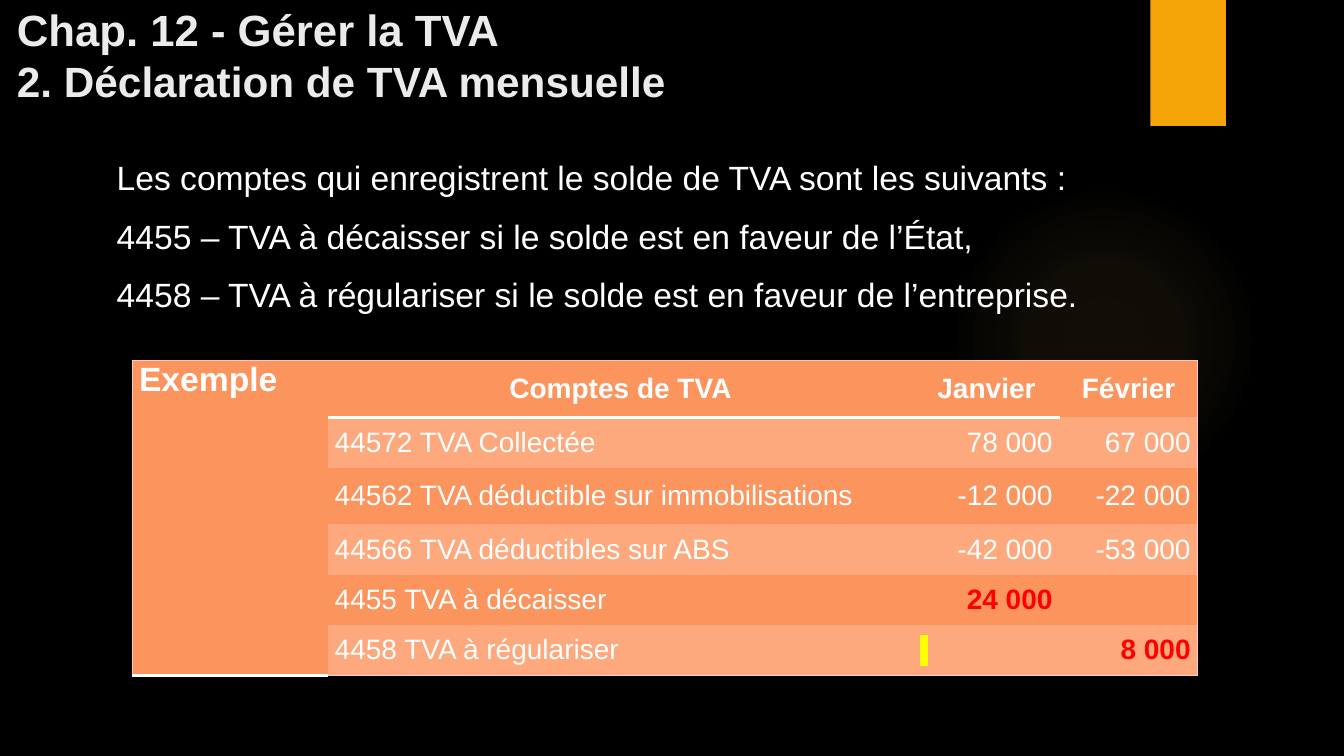
from dataclasses import dataclass

from lxml import etree
from pptx import Presentation
from pptx.dml.color import RGBColor
from pptx.enum.shapes import MSO_SHAPE
from pptx.enum.text import MSO_ANCHOR, PP_ALIGN
from pptx.oxml.ns import qn
from pptx.util import Inches, Pt

LEFT, CENTER, RIGHT = PP_ALIGN.LEFT, PP_ALIGN.CENTER, PP_ALIGN.RIGHT
TOP, MIDDLE, BOTTOM = MSO_ANCHOR.TOP, MSO_ANCHOR.MIDDLE, MSO_ANCHOR.BOTTOM
RECT, OVAL = MSO_SHAPE.RECTANGLE, MSO_SHAPE.OVAL

FONT = "Arial"
PLAIN_STYLE = "{2D5ABB26-0587-4C30-8999-92F81FD0307C}"
COLORS = {
    "back": "000000", "white": "FFFFFF", "title": "EBEBEB", "gold": "F5A408",
    "glow": "FAC96A", "base": "FC945D", "band": "FDA97D", "edge": "FDC9BD",
    "red": "FF0000", "mark": "FFFF00",
}


@dataclass
class Style:
    size: float
    color: str = "white"
    bold: bool = False
    align: PP_ALIGN = LEFT


@dataclass
class Account:
    name: str
    january: str
    february: str
    result: bool = False


TITLE = [("Chap. 12 - Gérer la TVA", 31.2), ("2. Déclaration de TVA mensuelle", 30.2)]
BODY = [
    "Les comptes qui enregistrent le solde de TVA sont les suivants :",
    "4455 – TVA à décaisser si le solde est en faveur de l’État,",
    "4458 – TVA à régulariser si le solde est en faveur de l’entreprise.",
]
HEADS = ["Comptes de TVA", "Janvier", "Février"]
ACCOUNTS = [
    Account("44572 TVA Collectée", "78 000", "67 000"),
    Account("44562 TVA déductible sur immobilisations", "-12 000", "-22 000"),
    Account("44566 TVA déductibles sur ABS", "-42 000", "-53 000"),
    Account("4455 TVA à décaisser", "24 000", "", True),
    Account("4458 TVA à régulariser", " ", "8 000", True),
]
WIDTHS = [1.94, 5.81, 1.45, 1.37]
HEIGHTS = [0.56, 0.5, 0.56, 0.5, 0.5, 0.5]


def rgb(name: str) -> RGBColor:
    return RGBColor.from_string(COLORS[name])


def format_text(par, style: Style) -> None:
    par.alignment = style.align
    for run in par.runs:
        font = run.font
        font.name, font.size, font.bold = FONT, Pt(style.size), style.bold
        font.color.rgb = rgb(style.color)


def add_color(parent, name: str):
    fill = etree.SubElement(parent, qn("a:solidFill"))
    etree.SubElement(fill, qn("a:srgbClr"), val=COLORS[name])


def add_block(slide, kind, box: tuple, color: str):
    shape = slide.shapes.add_shape(kind, *map(Inches, box))
    shape.shadow.inherit = False
    shape.line.fill.background()
    shape.fill.solid()
    shape.fill.fore_color.rgb = rgb(color)
    return shape


def add_glow(slide) -> None:
    shape = add_block(slide, OVAL, (9.41, 1.83, 3.08, 3.08), "glow")
    grad = etree.Element(qn("a:gradFill"), rotWithShape="1")
    stops = etree.SubElement(grad, qn("a:gsLst"))
    for place, alpha in [(0, 7), (36, 6), (69, 0), (100, 0)]:
        stop = etree.SubElement(stops, qn("a:gs"), pos=str(place * 1000))
        tint = etree.SubElement(stop, qn("a:srgbClr"), val=COLORS["glow"])
        etree.SubElement(tint, qn("a:alpha"), val=str(alpha * 1000))
    radial = etree.SubElement(grad, qn("a:path"), path="circle")
    etree.SubElement(radial, qn("a:fillToRect"), l="50000", t="50000", r="50000", b="50000")
    old = shape.element.spPr.find(qn("a:solidFill"))
    old.getparent().replace(old, grad)


def add_frame(slide, box: tuple, anchor: MSO_ANCHOR):
    frame = slide.shapes.add_textbox(*map(Inches, box)).text_frame
    frame.word_wrap = True
    frame.vertical_anchor = anchor
    return frame


def fill_cell(cell, text: str, style: Style, fill: str, anchor: MSO_ANCHOR = MIDDLE) -> None:
    cell.margin_left = cell.margin_right = Inches(0.07)
    cell.margin_top = cell.margin_bottom = 0
    cell.vertical_anchor = anchor
    cell.fill.solid()
    cell.fill.fore_color.rgb = rgb(fill)
    par = cell.text_frame.paragraphs[0]
    par.text = text
    format_text(par, style)


def set_edges(cell, edges: dict) -> None:
    props = cell._tc.get_or_add_tcPr()
    sides = [side for side in "LRTB" if side in edges]
    for index, side in enumerate(sides):
        color, width = edges[side]
        line = etree.Element(qn(f"a:ln{side}"), w=str(Pt(width)))
        add_color(line, color)
        props.insert(index, line)


def mark_text(cell) -> None:
    props = cell.text_frame.paragraphs[0].runs[0].font._element
    light = etree.Element(qn("a:highlight"))
    etree.SubElement(light, qn("a:srgbClr"), val=COLORS["mark"])
    props.find(qn("a:latin")).addprevious(light)


def add_grid(slide) -> None:
    box = (1.31, 3.58, sum(WIDTHS), sum(HEIGHTS))
    table = slide.shapes.add_table(len(HEIGHTS), len(WIDTHS), *map(Inches, box)).table
    table._tbl.tblPr.find(qn("a:tableStyleId")).text = PLAIN_STYLE
    table.first_row = table.horz_banding = False
    for col, width in zip(table.columns, WIDTHS):
        col.width = Inches(width)
    for row, height in zip(table.rows, HEIGHTS):
        row.height = Inches(height)

    thin, thick = ("edge", 0.75), ("white", 2.25)
    last = len(ACCOUNTS)

    # Merged label column
    label = table.cell(0, 0)
    label.merge(table.cell(last, 0))
    fill_cell(label, "Exemple", Style(24, bold=True), "base", TOP)
    set_edges(label, {"L": thin, "T": thin, "B": thick})

    # Heading row
    for col, head in enumerate(HEADS, 1):
        cell = table.cell(0, col)
        fill_cell(cell, head, Style(20, bold=True, align=CENTER), "base")
        set_edges(cell, {"T": thin, **({"R": thin} if col == 3 else {"B": thick})})

    # Account rows
    for row, account in enumerate(ACCOUNTS, 1):
        texts = [account.name, account.january, account.february]
        for col, text in enumerate(texts, 1):
            cell = table.cell(row, col)
            strong = account.result and col > 1
            blank = text == " "
            style = Style(20, "red" if strong else "white", strong,
                          LEFT if col == 1 or blank else RIGHT)
            fill_cell(cell, text, style, "band" if row % 2 else "base")
            edges = {"R": thin} if col == 3 else {}
            if row == last:
                edges["B"] = thin
            set_edges(cell, edges)
            if blank:
                mark_text(cell)


def main() -> None:
    deck = Presentation()
    deck.slide_width, deck.slide_height = Inches(13.33), Inches(7.5)
    slide = deck.slides.add_slide(deck.slide_layouts[6])
    slide.background.fill.solid()
    slide.background.fill.fore_color.rgb = rgb("back")

    # Backdrop
    add_glow(slide)
    add_block(slide, RECT, (11.41, 0, 0.75, 1.25), "gold")

    # Body text
    frame = add_frame(slide, (1.06, 1.51, 11.26, 1.65), TOP)
    frame.text = "\n".join(BODY)
    for index, par in enumerate(frame.paragraphs):
        format_text(par, Style(24))
        if index:
            par.space_before = Pt(13)

    add_grid(slide)

    # Title
    par = add_frame(slide, (0.07, 0, 9.65, 1.1), BOTTOM).paragraphs[0]
    par.text = "\v".join(text for text, _ in TITLE)
    format_text(par, Style(30, "title", True))
    for run, (_, size) in zip(par.runs, TITLE):
        run.font.size = Pt(size)

    deck.save("out.pptx")


if __name__ == "__main__":
    main()
